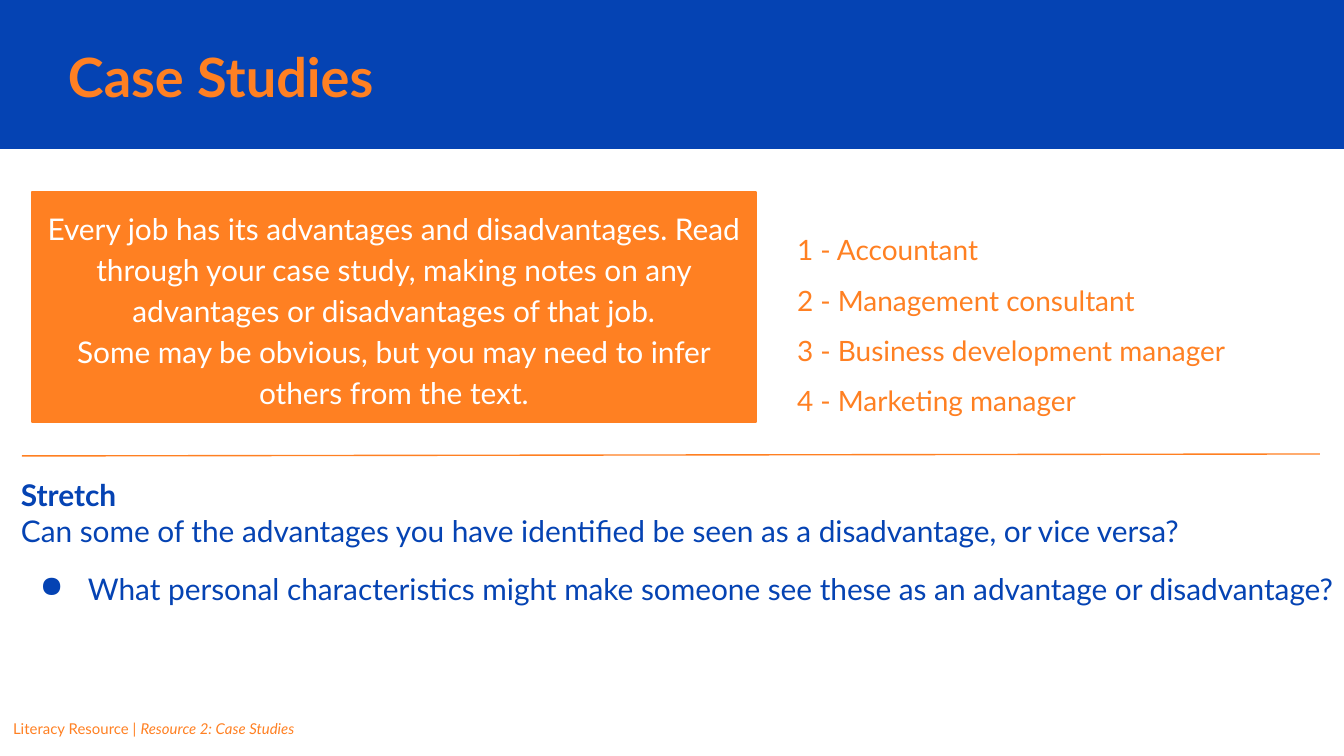
"""Build the Case Studies slide with a task, a list of jobs and a stretch question."""
from lxml import etree
from pptx import Presentation
from pptx.dml.color import RGBColor
from pptx.enum.shapes import MSO_CONNECTOR, MSO_SHAPE
from pptx.enum.text import MSO_ANCHOR, PP_ALIGN
from pptx.oxml.ns import qn
from pptx.util import Pt

RECTANGLE = MSO_SHAPE.RECTANGLE
STRAIGHT = MSO_CONNECTOR.STRAIGHT
TOP, MIDDLE = MSO_ANCHOR.TOP, MSO_ANCHOR.MIDDLE
LEFT, CENTER = PP_ALIGN.LEFT, PP_ALIGN.CENTER

FONT = "Lato"
BLUE, ORANGE, WHITE = "0543B3", "FF8022", "FFFFFF"
EMU_PER_PX = 914400 / 134.4
SLIDE_SIZE = (1344, 756)
INSET = 13

TITLE = "Case Studies"
TASK = [
    "Every job has its advantages and disadvantages. Read through your case study, "
    "making notes on any advantages or disadvantages of that job.",
    "Some may be obvious, but you may need to infer others from the text.",
]
JOBS = ["Accountant", "Management consultant", "Business development manager", "Marketing manager"]
STRETCH = [
    "Stretch",
    "Can some of the advantages you have identified be seen as a disadvantage, or vice versa?",
    "What personal characteristics might make someone see these as an advantage or disadvantage?",
]
FOOTER = ["Literacy Resource | ", "Resource 2: Case Studies"]

BAND_BOX = (0, 0, 1344, 149)
TITLE_BOX = (55, 38, 1137, 75)
TASK_BOX = (32, 192, 724, 230)
JOBS_BOX = (784, 203, 515, 214)
STRETCH_BOX = (8, 464, 1351, 195)
FOOTER_BOX = (0, 711, 829, 63)
DIVIDER = (22, 456, 1320, 454)


def px(length):
    return round(length * EMU_PER_PX)


def scaled(lengths):
    return [px(length) for length in lengths]


def color(value):
    return RGBColor.from_string(value)


def write(shape, lines, size, tint, align=LEFT, spacing=None, anchor=TOP):
    frame = shape.text_frame
    frame.word_wrap = True
    frame.vertical_anchor = anchor
    frame.margin_left = frame.margin_right = px(INSET)
    frame.margin_top = frame.margin_bottom = px(INSET)
    frame.text = "\n".join(lines)
    for paragraph in frame.paragraphs:
        paragraph.alignment = align
        paragraph.line_spacing = spacing
        for run in paragraph.runs:
            style(run, size, tint)
    return frame.paragraphs


def style(run, size, tint):
    run.font.name = FONT
    run.font.size = Pt(size)
    run.font.color.rgb = color(tint)


def add_rectangle(slide, box, fill):
    shape = slide.shapes.add_shape(RECTANGLE, *scaled(box))
    shape.shadow.inherit = False
    shape.fill.solid()
    shape.fill.fore_color.rgb = color(fill)
    shape.line.color.rgb = color(fill)
    shape.line.width = Pt(0.75)
    return shape


def add_text(slide, box, lines, size, tint, spacing=None):
    return write(slide.shapes.add_textbox(*scaled(box)), lines, size, tint, spacing=spacing)


def add_bullet(paragraph, indent, hanging):
    properties = paragraph._p.get_or_add_pPr()
    properties.set("marL", str(px(indent)))
    properties.set("indent", str(-px(hanging)))
    etree.SubElement(properties, qn("a:buChar")).set("char", "●")


def add_divider(slide, ends):
    line = slide.shapes.add_connector(STRAIGHT, *scaled(ends))
    line.line.color.rgb = color(ORANGE)
    line.line.width = Pt(0.75)
    etree.SubElement(line._element.spPr, qn("a:effectLst"))


def main():
    presentation = Presentation()
    presentation.slide_width, presentation.slide_height = scaled(SLIDE_SIZE)
    slide = presentation.slides.add_slide(presentation.slide_layouts[5])

    band = add_rectangle(slide, BAND_BOX, BLUE)
    band.line.fill.background()
    title = slide.shapes.title
    band._element.addnext(title._element)
    title.left, title.top, title.width, title.height = scaled(TITLE_BOX)
    heading = write(title, [TITLE], 29, ORANGE, anchor=MIDDLE)[0]
    heading.runs[0].font.bold = True

    write(add_rectangle(slide, TASK_BOX, ORANGE), TASK, 16, WHITE, CENTER, 1.15)

    stretch, question, follow_up = add_text(slide, STRETCH_BOX, STRETCH, 16, BLUE)
    stretch.runs[0].font.bold = True
    follow_up.space_before = Pt(12)
    add_bullet(follow_up, 67, 48)

    footer = add_text(slide, FOOTER_BOX, FOOTER[:1], 8, ORANGE)[0]
    resource = footer.add_run()
    resource.text = FOOTER[1]
    style(resource, 8, ORANGE)
    resource.font.italic = True

    jobs = [f"{number} - {job}" for number, job in enumerate(JOBS, 1)]
    add_text(slide, JOBS_BOX, jobs, 15, ORANGE, 1.5)
    add_divider(slide, DIVIDER)
    presentation.save("out.pptx")


if __name__ == "__main__":
    main()
